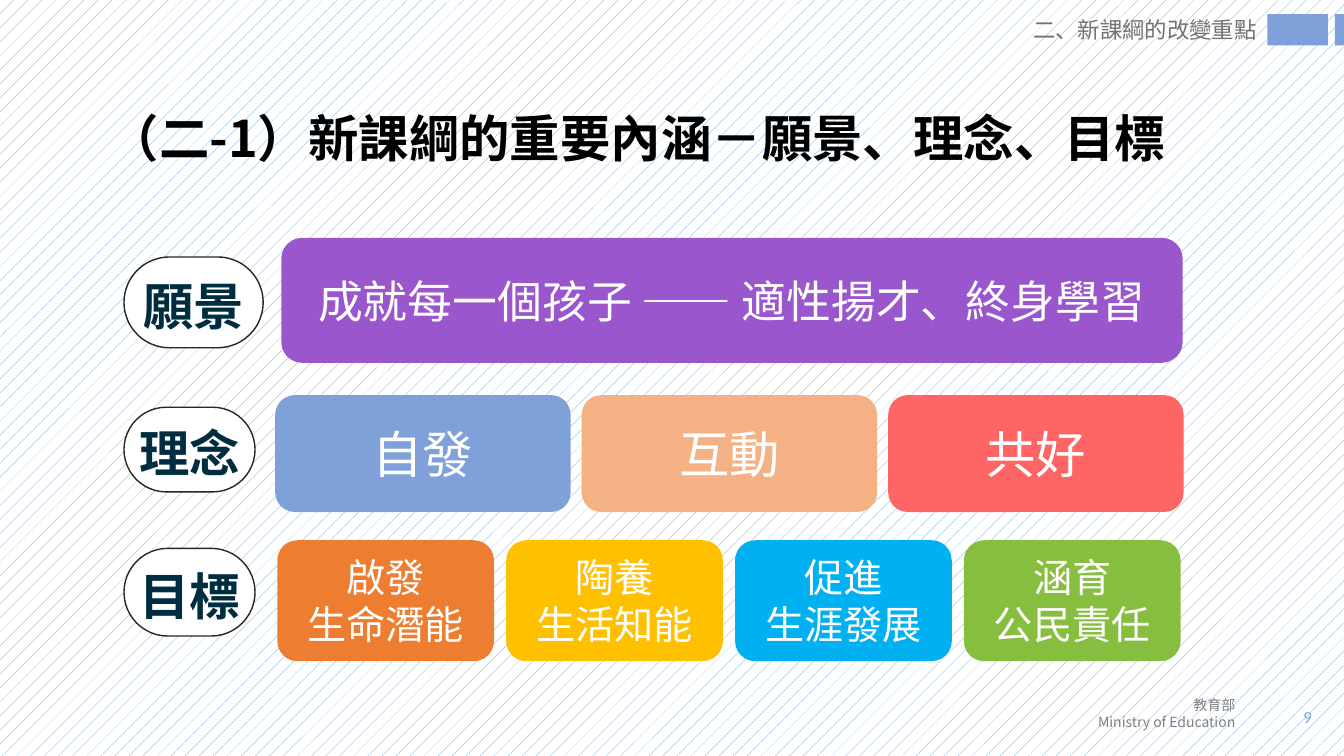
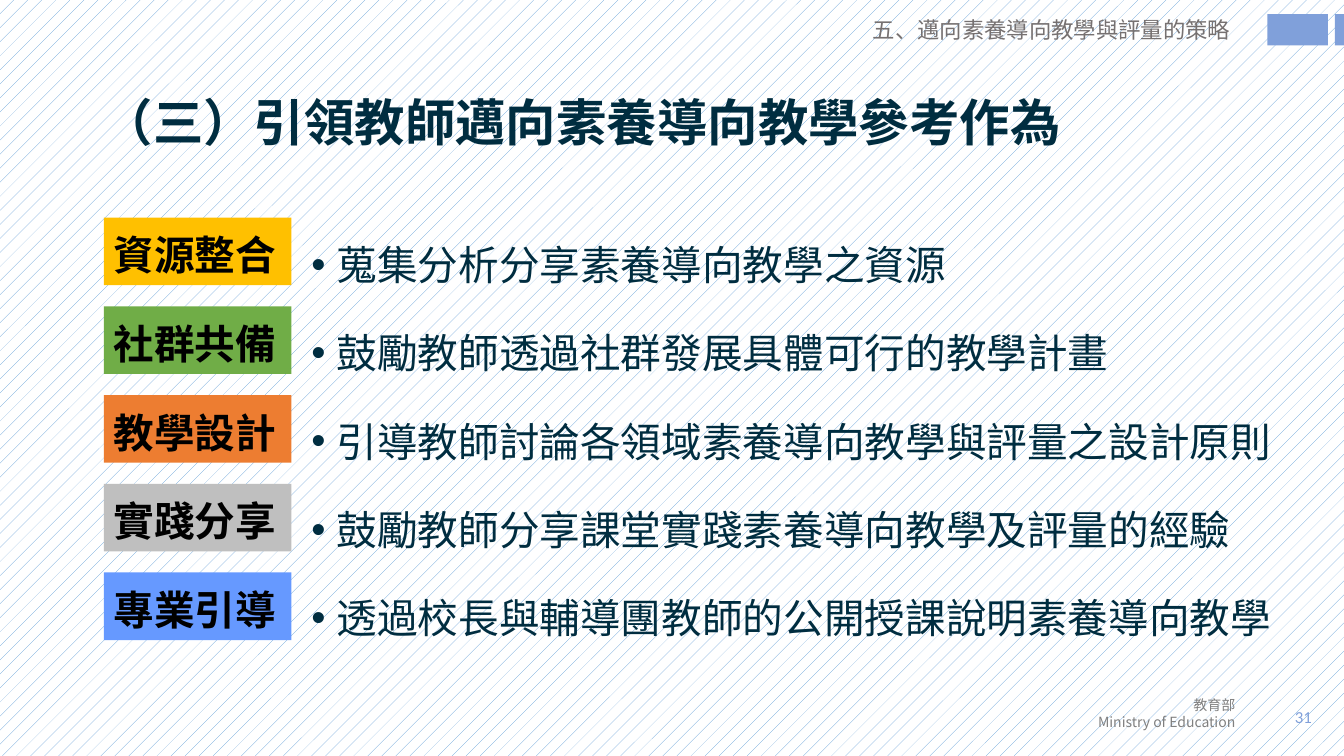
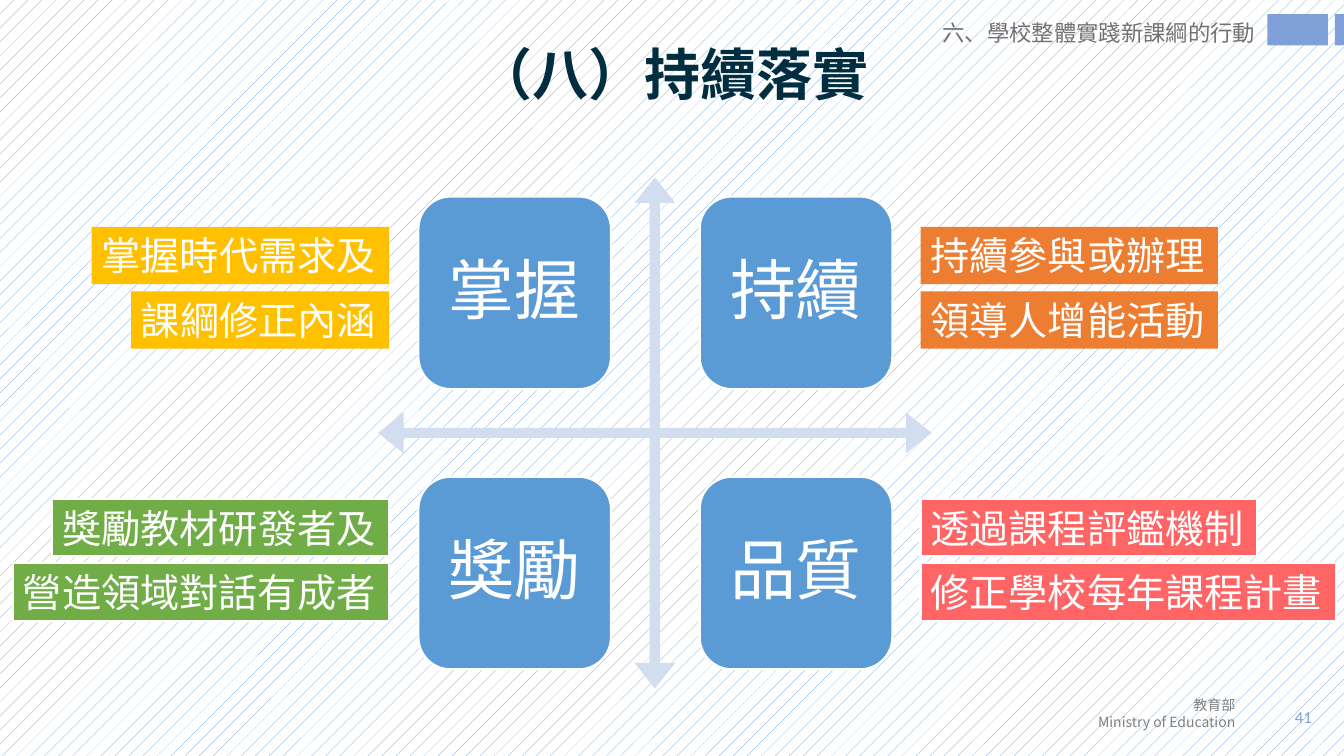
from lxml import etree
from pptx import Presentation
from pptx.dml.color import RGBColor
from pptx.enum.dml import MSO_PATTERN
from pptx.enum.shapes import MSO_SHAPE
from pptx.enum.text import MSO_ANCHOR, PP_ALIGN
from pptx.oxml.ns import qn
from pptx.util import Inches, Pt

RECT, ROUND = MSO_SHAPE.RECTANGLE, MSO_SHAPE.ROUNDED_RECTANGLE
QUAD = MSO_SHAPE.QUAD_ARROW
LEFT, MID, RIGHT = PP_ALIGN.LEFT, PP_ALIGN.CENTER, PP_ALIGN.RIGHT
TOP, CENTER = MSO_ANCHOR.TOP, MSO_ANCHOR.MIDDLE
DOTS = MSO_PATTERN.PERCENT_5

# Shared look
SANS, NUM = "Noto Sans CJK SC", "Calibri"
NAVY, BLACK, WHITE = "002D40", "000000", "FFFFFF"
BAND, BLUE, INK = "80A0DA", "5B9BD5", "262626"
GOLD, GREEN, ORANGE, CORAL = "FFC000", "70AD47", "ED7D31", "FF6565"
LOW = 0.11  # top inset that sets a label slightly below the middle


def color(code):
    return RGBColor.from_string(code)


def write(shape, text, size, ink, bold=False, align=LEFT, anchor=TOP,
          font=SANS, wrap=True, top=0.05, space=None):
    """Fill a shape with one paragraph for each line of text."""
    frame = shape.text_frame
    frame.word_wrap = wrap
    frame.vertical_anchor = anchor
    frame.margin_top = Inches(top)
    frame.text = text
    for para in frame.paragraphs:
        para.alignment = align
        if space:
            para.line_spacing = space
        style = para.font
        style.size, style.bold, style.name = Pt(size), bold, font
        style.color.rgb = color(ink)
        base = para._p.pPr.find(qn("a:defRPr"))
        etree.SubElement(base, qn("a:ea")).set("typeface", font)
    return frame


def add_text(slide, box, text, size, ink, **look):
    shape = slide.shapes.add_textbox(*map(Inches, box))
    return write(shape, text, size, ink, **look)


def add_box(slide, kind, box, fill, line=None, width=1.5, adjust=()):
    shape = slide.shapes.add_shape(kind, *map(Inches, box))
    shape.shadow.inherit = False
    shape.fill.solid()
    shape.fill.fore_color.rgb = color(fill)
    if line:
        shape.line.color.rgb = color(line)
        shape.line.width = Pt(width)
    else:
        shape.line.fill.background()
    for i, value in enumerate(adjust):
        shape.adjustments[i] = value
    return shape


def add_card(slide, box, fill, text, size, line=None, space=None):
    card = add_box(slide, ROUND, box, fill, line)
    write(card, text, size, WHITE, align=MID, anchor=CENTER, wrap=False,
          space=space)


def add_pill(slide, box, text):
    pill = add_box(slide, ROUND, box, WHITE, INK, 1, [0.5])
    write(pill, text, 36, NAVY, bold=True, align=MID, anchor=CENTER,
          wrap=False, top=LOW)


def add_title(slide, box, text, size=36, ink=NAVY, align=LEFT):
    add_text(slide, box, text, size, ink, bold=True, align=align,
             anchor=CENTER, space=0.9)


def add_list(slide, box, items):
    frame = add_text(slide, box, "\n".join(items), 29, NAVY, space=Pt(53))
    for para in frame.paragraphs:
        para.space_before = Pt(10)
        props = para._p.pPr
        props.set("marL", str(Inches(0.25)))
        props.set("indent", str(-Inches(0.25)))
        face = etree.Element(qn("a:buFont"), typeface="Arial")
        mark = etree.Element(qn("a:buChar"), char="•")
        base = props.find(qn("a:defRPr"))
        base.addprevious(face)
        base.addprevious(mark)


def new_slide(deck, topic, box, page):
    """Add a slide with the ground, band, topic and footer."""
    slide = deck.slides.add_slide(deck.slide_layouts[6])
    fill = slide.background.fill
    fill.patterned()
    fill.pattern = DOTS
    fill.fore_color.rgb = color(BLUE)
    fill.back_color.rgb = color(WHITE)
    for left, width in ((12.57, 0.6), (13.24, 0.09)):
        add_box(slide, RECT, (left, 0.14, width, 0.31), BAND)
    add_text(slide, box, topic, 16, "767171")
    add_text(slide, (10.75, 6.86, 1.6, 0.44), "教育部\nMinistry of Education",
             10, "808080", align=RIGHT, wrap=False)
    add_text(slide, (10.86, 6.96, 2.25, 0.3), page, 12, BAND, align=RIGHT,
             anchor=CENTER, font=NUM)
    return slide


def vision_slide(deck):
    slide = new_slide(deck, "二、新課綱的改變重點", (10.15, 0.11, 2.8, 0.37), "9")
    add_title(slide, (0.98, 0.68, 11.5, 1.45),
              "（二-1）新課綱的重要內涵－願景、理念、目標", ink=BLACK)
    # Row labels
    add_pill(slide, (1.23, 2.55, 1.38, 0.9), "願景")
    add_pill(slide, (1.23, 4.04, 1.3, 0.84), "理念")
    add_pill(slide, (1.23, 5.44, 1.3, 0.87), "目標")
    # Vision, ideas and goals
    add_card(slide, (2.79, 2.36, 8.94, 1.24), "9A57CD",
             "成就每一個孩子 —— 適性揚才、終身學習", 32)
    ideas = (("自發", BAND), ("互動", "F4B183"), ("共好", CORAL))
    for i, (text, fill) in enumerate(ideas):
        add_card(slide, (2.73 + 3.04 * i, 3.92, 2.93, 1.16), fill, text, 36)
    goals = (("啟發\n生命潛能", ORANGE), ("陶養\n生活知能", GOLD),
             ("促進\n生涯發展", "00B0F0"), ("涵育\n公民責任", "88BE3F"))
    for i, (text, fill) in enumerate(goals):
        add_card(slide, (2.75 + 2.27 * i, 5.36, 2.15, 1.2), fill, text, 28)


def guide_slide(deck):
    slide = new_slide(deck, "五、邁向素養導向教學與評量的策略",
                      (8.56, 0.11, 4.13, 0.37), "31")
    add_title(slide, (0.92, 0.52, 11.78, 1.45),
              "（三）引領教師邁向素養導向教學參考作為")
    rows = (("資源整合", GOLD, "蒐集分析分享素養導向教學之資源"),
            ("社群共備", GREEN, "鼓勵教師透過社群發展具體可行的教學計畫"),
            ("教學設計", ORANGE, "引導教師討論各領域素養導向教學與評量之設計原則"),
            ("實踐分享", "BFBFBF", "鼓勵教師分享課堂實踐素養導向教學及評量的經驗"),
            ("專業引導", "6699FF", "透過校長與輔導團教師的公開授課說明素養導向教學"))
    add_list(slide, (2.99, 2.08, 9.92, 4.58), [row[2] for row in rows])
    for i, (text, fill, _) in enumerate(rows):
        tag = add_box(slide, RECT, (1.03, 2.16 + 0.88 * i, 1.86, 0.67), fill)
        write(tag, text, 29, BLACK, bold=True, anchor=CENTER, wrap=False,
              top=LOW)


def action_slide(deck):
    slide = new_slide(deck, "六、學校整體實踐新課綱的行動",
                      (9.25, 0.14, 3.86, 0.64), "41")
    add_title(slide, (0.92, 0.4, 11.5, 0.73), "（八）持續落實", 40, align=MID)
    add_box(slide, QUAD, (3.75, 1.76, 5.49, 5.07), "D2DEEF",
            adjust=(0.02, 0.04, 0.05))
    # Quarters: column, row, word, note fill, note outline, notes
    parts = ((0, 0, "掌握", GOLD, None, ("掌握時代需求及", "課綱修正內涵")),
             (1, 0, "持續", ORANGE, None, ("持續參與或辦理", "領導人增能活動")),
             (0, 1, "獎勵", GREEN, WHITE, ("獎勵教材研發者及", "營造領域對話有成者")),
             (1, 1, "品質", CORAL, WHITE, ("透過課程評鑑機制", "修正學校每年課程計畫")))
    for col, row, word, fill, line, notes in parts:
        add_card(slide, (4.15 + 2.79 * col, 1.95 + 2.78 * row, 1.91, 1.91),
                 BLUE, word, 47, WHITE, 0.9)
        for i, text in enumerate(notes):
            width = 0.22 + 0.39 * len(text)
            left = 9.13 if col else 3.86 - width
            top = 2.25 + 2.7 * row + 0.64 * i
            note = add_box(slide, RECT, (left, top, width, 0.57), fill, line)
            write(note, text, 28, WHITE, wrap=False)


def main():
    deck = Presentation()
    deck.slide_width, deck.slide_height = Inches(13.33), Inches(7.5)
    vision_slide(deck)
    guide_slide(deck)
    action_slide(deck)
    deck.save("out.pptx")


if __name__ == "__main__":
    main()
